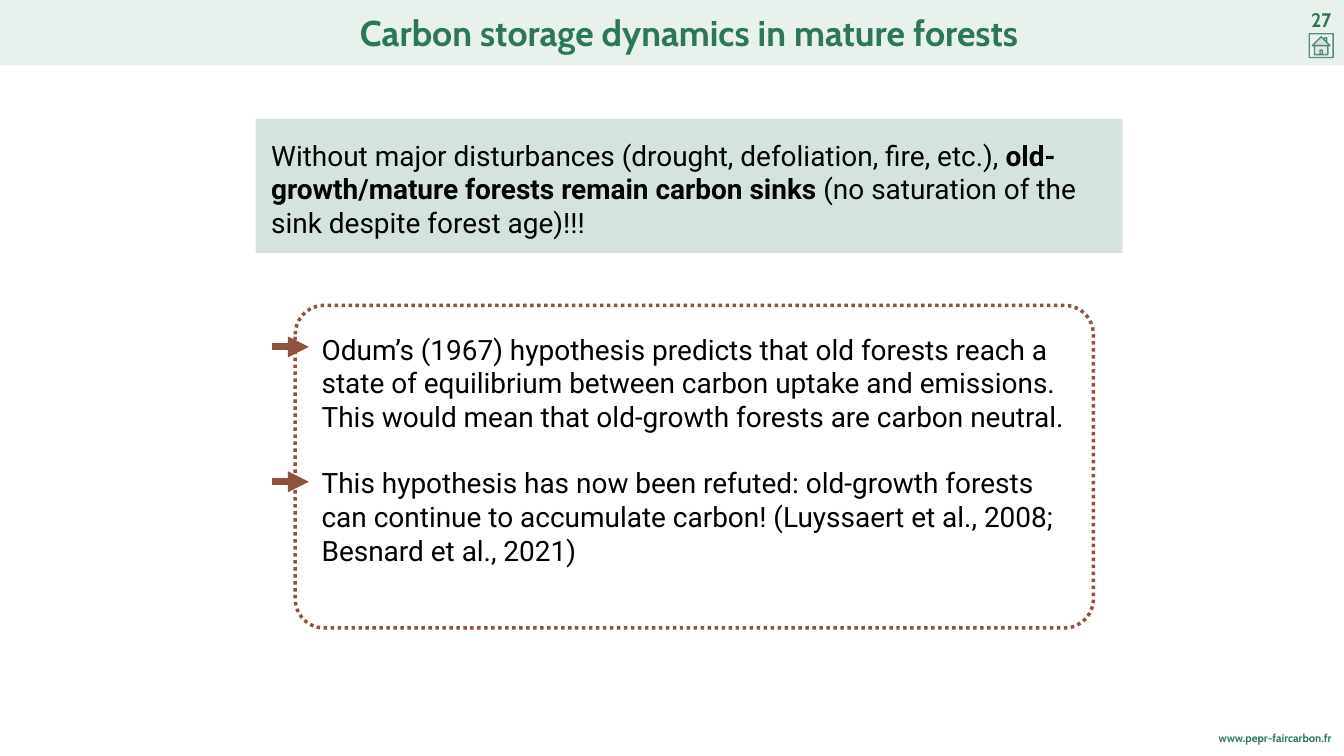
from lxml import etree
from pptx import Presentation
from pptx.dml.color import RGBColor
from pptx.enum.dml import MSO_LINE
from pptx.enum.shapes import MSO_CONNECTOR, MSO_SHAPE
from pptx.enum.text import MSO_ANCHOR, MSO_AUTO_SIZE, PP_ALIGN
from pptx.oxml.ns import qn
from pptx.util import Cm, Pt

COLORS = {"green": "2B7758", "brown": "8D533E", "white": "FFFFFF", "black": "000000"}


def fill_tint(fill, color, opacity):
    """Solid fill with the given opacity in percent."""
    fill.solid()
    fill.fore_color.rgb = RGBColor.from_string(COLORS[color])
    for srgb in fill._xPr.iter(qn("a:srgbClr")):
        etree.SubElement(srgb, qn("a:alpha")).set("val", str(opacity * 1000))


def write(frame, paragraphs, font, size, color, align, inset, gap=0):
    """Fill a text frame; each paragraph is a list of (text, bold) runs."""
    frame.word_wrap = True
    frame.auto_size = MSO_AUTO_SIZE.NONE
    frame.vertical_anchor = MSO_ANCHOR.TOP
    frame.margin_left = frame.margin_right = Cm(inset)
    frame.margin_top = frame.margin_bottom = Cm(inset)
    for i, runs in enumerate(paragraphs):
        paragraph = frame.paragraphs[0] if i == 0 else frame.add_paragraph()
        paragraph.alignment = align
        paragraph.space_before = Pt(gap if i else 0)
        for text, bold in runs:
            run = paragraph.add_run()
            run.text = text
            run.font.name = font
            run.font.size = Pt(size)
            run.font.bold = bold
            run.font.color.rgb = RGBColor.from_string(COLORS[color])


prs = Presentation()
prs.slide_width, prs.slide_height = Cm(67.74), Cm(38.1)
slide = prs.slides.add_slide(prs.slide_layouts[1])
shapes = slide.shapes
title, hypotheses = slide.placeholders

# Header band, behind the title
band = shapes.add_shape(MSO_SHAPE.RECTANGLE, 0, 0, prs.slide_width, Cm(3.3))
band.shadow.inherit = False
band.line.fill.background()
fill_tint(band.fill, "green", 10)
shapes._spTree.insert(2, band._element)

# Title
title.left, title.top, title.width, title.height = Cm(5.28), Cm(0.56), Cm(58.9), Cm(2.39)
write(title.text_frame, [[("Carbon storage dynamics in mature forests", True)]],
      "Cabin", 51.1, "green", PP_ALIGN.CENTER, 0.15)
title.text_frame.vertical_anchor = MSO_ANCHOR.MIDDLE
title.text_frame.paragraphs[0].line_spacing = 0.9

# Home button
home = shapes.add_shape(MSO_SHAPE.ACTION_BUTTON_HOME, Cm(65.99), Cm(1.7), Cm(1.2), Cm(1.2))
home.shadow.inherit = False
fill_tint(home.fill, "white", 20)
fill_tint(home.line.fill, "green", 80)
home.line.width = Pt(2)

# Page number and web address
for text, size, align, left, top, width, height in (
    ("27", 28, PP_ALIGN.CENTER, 65.89, 0.28, 1.4, 1.45),
    ("www.pepr-faircarbon.fr", 16, PP_ALIGN.RIGHT, 60.81, 36.75, 6.43, 1.6),
):
    label = shapes.add_textbox(Cm(left), Cm(top), Cm(width), Cm(height))
    write(label.text_frame, [[(text, True)]], "Cabin", size, "green", align, 0.13)

# Key message
message = shapes.add_shape(MSO_SHAPE.RECTANGLE, Cm(12.88), Cm(5.99), Cm(43.71), Cm(6.76))
message.shadow.inherit = False
message.line.fill.background()
fill_tint(message.fill, "green", 20)
write(message.text_frame, [[
    ("Without major disturbances (drought, defoliation, fire, etc.), ", False),
    ("old-growth/mature forests remain carbon sinks", True),
    (" (no saturation of the sink despite forest age)!!!", False),
]], "Roboto", 40, "black", PP_ALIGN.LEFT, 0.79)
message.text_frame.margin_top = Cm(0.97)

# Dotted frame
frame = shapes.add_shape(MSO_SHAPE.ROUNDED_RECTANGLE, Cm(14.88), Cm(15.39), Cm(40.23), Cm(16.26))
frame.adjustments[0] = 0.09
frame.shadow.inherit = False
frame.fill.background()
frame.line.color.rgb = RGBColor.from_string(COLORS["brown"])
frame.line.width = Pt(5)
frame.line.dash_style = MSO_LINE.ROUND_DOT

# Hypotheses, with arrows in place of bullets
hypotheses.left, hypotheses.top = Cm(15.42), Cm(15.95)
hypotheses.width, hypotheses.height = Cm(39.17), Cm(13.46)
write(hypotheses.text_frame, [
    [("Odum’s (1967) hypothesis predicts that old forests reach a state of equilibrium "
      "between carbon uptake and emissions. This would mean that old-growth forests are "
      "carbon neutral.", False)],
    [("This hypothesis has now been refuted: old-growth forests can continue to accumulate "
      "carbon! (Luyssaert et al., 2008; Besnard et al., 2021)", False)],
], "Roboto", 40, "black", PP_ALIGN.LEFT, 0.79, gap=47)
for paragraph in hypotheses.text_frame.paragraphs:
    props = paragraph._p.get_or_add_pPr()
    props.set("marL", "0")
    props.set("indent", "0")
    etree.SubElement(props, qn("a:buNone"))

for y in (17.48, 24.28):
    arrow = shapes.add_connector(MSO_CONNECTOR.STRAIGHT, Cm(13.69), Cm(y), Cm(15.57), Cm(y))
    arrow.line.color.rgb = RGBColor.from_string(COLORS["brown"])
    arrow.line.width = Pt(10)
    etree.SubElement(arrow.line._get_or_add_ln(), qn("a:tailEnd")).set("type", "triangle")
    etree.SubElement(arrow._element.spPr, qn("a:effectLst"))

prs.save("out.pptx")
